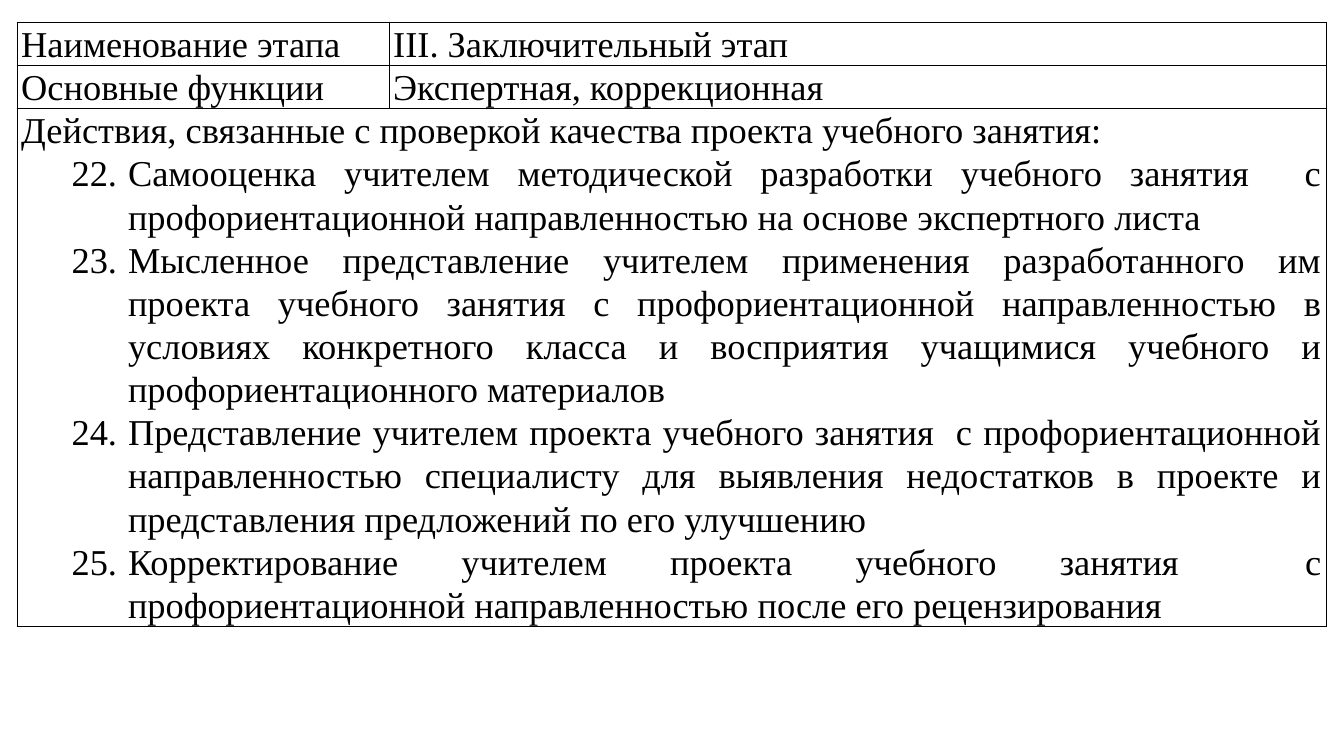
"""Build a slide with the table of the concluding stage of lesson design."""
from lxml import etree
from pptx import Presentation
from pptx.dml.color import RGBColor
from pptx.enum.text import PP_ALIGN
from pptx.oxml.ns import qn
from pptx.util import Pt

PX = 9144
BLANK_LAYOUT = 6
JUSTIFY = PP_ALIGN.JUSTIFY
COLORS = {"text": "000000", "border": "000000"}
FONT = {"name": "Times New Roman", "size": Pt(26), "bold": False}
MARGINS = {
    "margin_left": 4 * PX,
    "margin_right": 4 * PX,
    "margin_top": 0,
    "margin_bottom": 0,
}
PLAIN_TABLE = {"first_row": False, "horz_banding": False}
STEP_FORMAT = {"level": 1, "alignment": JUSTIFY}
LINE_SPACING = 1.07
BORDER_SIDES = ("a:lnL", "a:lnR", "a:lnT", "a:lnB")
COLUMN_WIDTHS = (369, 930)
ROW_HEIGHTS = (27, 27, 362)
FIRST_STEP = 22

HEADINGS = (
    ("Наименование этапа", "III. Заключительный этап"),
    ("Основные функции", "Экспертная, коррекционная"),
)
ACTIONS_INTRO = "Действия, связанные с проверкой качества проекта учебного занятия:"
STEPS = (
    "Самооценка учителем методической разработки учебного занятия  с "
    "профориентационной направленностью на основе экспертного листа",
    "Мысленное представление учителем применения разработанного им проекта "
    "учебного занятия с профориентационной направленностью в условиях "
    "конкретного класса и восприятия учащимися учебного и "
    "профориентационного материалов",
    "Представление учителем проекта учебного занятия  с профориентационной "
    "направленностью специалисту для выявления недостатков в проекте и "
    "представления предложений по его улучшению",
    "Корректирование учителем проекта учебного занятия  с "
    "профориентационной направленностью после его рецензирования",
)


def apply_format(target, values):
    """Set each attribute of the target from a dict."""
    for attribute, value in values.items():
        setattr(target, attribute, value)


def add_child(parent, tag, **attributes):
    """Append an XML element with attributes."""
    values = {key: str(value) for key, value in attributes.items()}
    return etree.SubElement(parent, qn(tag), values)


def style_cell(cell):
    """Give a cell its margins, thin borders and no fill."""
    apply_format(cell, MARGINS)
    properties = cell._tc.get_or_add_tcPr()
    for side in BORDER_SIDES:
        border = add_child(properties, side, w=Pt(1))
        border_fill = add_child(border, "a:solidFill")
        add_child(border_fill, "a:srgbClr", val=COLORS["border"])
    cell.fill.background()


def write_line(paragraph, wording):
    """Write one formatted line of text."""
    paragraph.line_spacing = LINE_SPACING
    run = paragraph.add_run()
    run.text = wording
    apply_format(run.font, FONT)
    run.font.color.rgb = RGBColor.from_string(COLORS["text"])


def add_step(frame, wording):
    """Add a numbered, justified step with a hanging indent."""
    paragraph = frame.add_paragraph()
    properties = paragraph._p.get_or_add_pPr()
    properties.set("marL", str(106 * PX))
    properties.set("indent", str(-56 * PX))
    add_child(properties, "a:buFont", typeface="+mj-lt")
    add_child(properties, "a:buAutoNum", type="arabicPeriod", startAt=FIRST_STEP)
    tabs = add_child(properties, "a:tabLst")
    add_child(tabs, "a:tab", pos=51 * PX, algn="l")
    apply_format(paragraph, STEP_FORMAT)
    write_line(paragraph, wording)


def add_stage_table(slide):
    """Add the empty bordered table with a merged last row."""
    table = slide.shapes.add_table(
        len(ROW_HEIGHTS), len(COLUMN_WIDTHS), 17 * PX, 22 * PX,
        sum(COLUMN_WIDTHS) * PX, sum(ROW_HEIGHTS) * PX,
    ).table
    apply_format(table, PLAIN_TABLE)
    for column, width in zip(table.columns, COLUMN_WIDTHS):
        column.width = width * PX
    for row, height in zip(table.rows, ROW_HEIGHTS):
        row.height = height * PX
    for cell in table.iter_cells():
        style_cell(cell)
    table.cell(2, 0).merge(table.cell(2, 1))
    return table


def main():
    """Build and save the slide."""
    presentation = Presentation()
    presentation.slide_width = 1333 * PX
    presentation.slide_height = 750 * PX
    slide = presentation.slides.add_slide(presentation.slide_layouts[BLANK_LAYOUT])
    table = add_stage_table(slide)
    for row_index, headings in enumerate(HEADINGS):
        for column_index, heading in enumerate(headings):
            frame = table.cell(row_index, column_index).text_frame
            write_line(frame.paragraphs[0], heading)
    actions = table.cell(2, 0).text_frame
    write_line(actions.paragraphs[0], ACTIONS_INTRO)
    for step in STEPS:
        add_step(actions, step)
    presentation.save("out.pptx")


if __name__ == "__main__":
    main()
